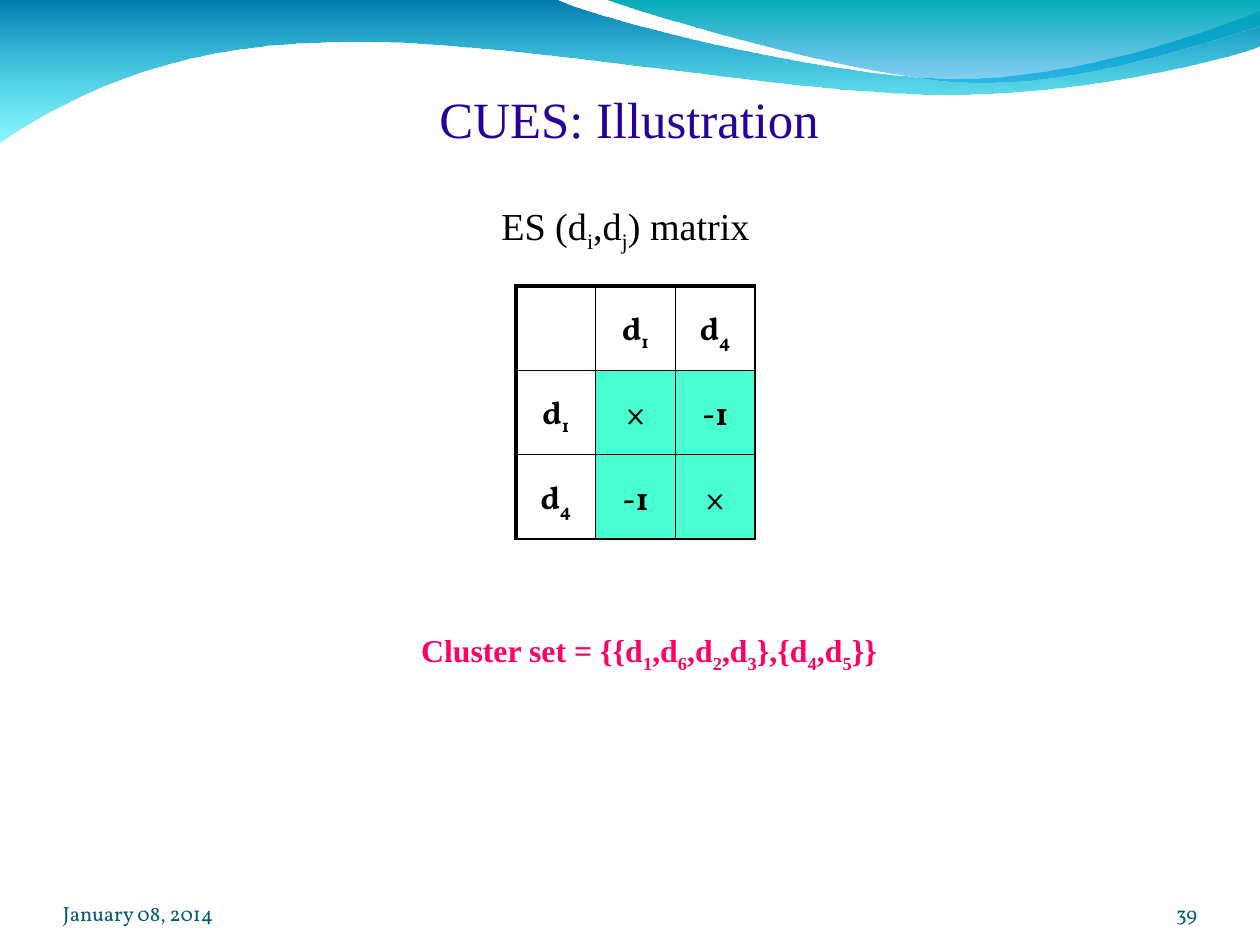
import dataclasses

import lxml.etree
import pptx
import pptx.dml.color
import pptx.enum.text
import pptx.oxml.ns
import pptx.util

PX = 8000  # EMU per px
ALIGN = pptx.enum.text.PP_ALIGN
ANCHOR = pptx.enum.text.MSO_ANCHOR


@dataclasses.dataclass(frozen=True)
class Theme:
    serif: str = "Times New Roman"
    body: str = "Vollkorn"
    title: str = "280099"
    ink: str = "000000"
    accent: str = "FF0066"
    footer: str = "045C75"
    value_fill: str = "47FFD1"
    back_wave: tuple = ("0079AF", "00EBF8")
    front_wave: tuple = ("00ADB6", "009BE5")
    wave_end_alpha: int = 45
    title_size: int = 32
    heading_size: int = 24
    text_size: int = 20
    footer_size: int = 13
    thin: float = 1
    thick: float = 2.25


THEME = Theme()

# Each step holds one point (line) or three points (cubic curve).
BACK_WAVE = [
    [(-1, -1)],
    [(554, -1)],
    [(599, 21), (837, 79), (956, 79)],
    [(1076, 79), (1208, 32), (1260, 11)],
    [(1262, 46)],
    [(1239, 55), (1096, 96), (940, 95)],
    [(784, 95), (481, 35), (325, 43)],
    [(162, 45), (57, 104), (-1, 143)],
]
FRONT_WAVE = [
    [(604, -1)],
    [(643, 14), (860, 78), (969, 82)],
    [(1078, 87), (1212, 40), (1260, 26)],
    [(1260, 0)],
]
MATRIX = [
    [[], ["d", "1"], ["d", "4"]],
    [["d", "1"], ["×"], ["-1"]],
    [["d", "4"], ["-1"], ["×"]],
]


def px(*lengths):
    return [pptx.util.Emu(length * PX) for length in lengths]


def rgb(color):
    return pptx.dml.color.RGBColor.from_string(color)


def add_element(parent, tag, **attributes):
    return lxml.etree.SubElement(parent, pptx.oxml.ns.qn(tag), attributes)


def apply_format(target, values):
    for name, value in values.items():
        setattr(target, name, value)


def margins(left, top, right, bottom):
    names = ("margin_left", "margin_top", "margin_right", "margin_bottom")
    return dict(zip(names, px(left, top, right, bottom)))


def write_text(frame, parts, size, color, font=THEME.serif, bold=False, **paragraph_format):
    """Write parts as one paragraph; every second part is a subscript."""
    paragraph = frame.paragraphs[0]
    apply_format(paragraph, paragraph_format)
    for index, part in enumerate(parts):
        run = paragraph.add_run()
        run.text = part
        apply_format(run.font, {"name": font, "size": pptx.util.Pt(size), "bold": bold})
        run.font.color.rgb = rgb(color)
        if index % 2:
            run._r.get_or_add_rPr().set("baseline", "-25000")


def add_text(slide, box, parts, size, color, insets, anchor=ANCHOR.TOP, **text_format):
    frame = slide.shapes.add_textbox(*px(*box)).text_frame
    apply_format(frame, {"word_wrap": True, "vertical_anchor": anchor, **margins(*insets)})
    write_text(frame, parts, size, color, **text_format)


def set_title(slide, text):
    title = slide.shapes.title
    apply_format(title, dict(zip(("left", "top", "width", "height"), px(63, 83, 1133, 66))))
    apply_format(title.text_frame, {
        "word_wrap": True,
        "auto_size": pptx.enum.text.MSO_AUTO_SIZE.NONE,
        "vertical_anchor": ANCHOR.BOTTOM,
        **margins(0, 7, 0, 0),
    })
    write_text(title.text_frame, [text], THEME.title_size, THEME.title, alignment=ALIGN.CENTER)


def bend_segments(shape, steps):
    """Turn the three lines drawn for each curve step into one cubic curve."""
    lines = iter(shape.element.xpath(".//a:path/a:lnTo"))
    for step in steps:
        segment = [next(lines) for _ in step]
        if len(segment) == 3:
            outline = segment[0].getparent()
            curve = add_element(outline, "a:cubicBezTo")
            outline.replace(segment[0], curve)
            for line in segment:
                curve.append(line[0])
            for line in segment[1:]:
                outline.remove(line)


def add_wave(slide, steps, colors):
    """Add a wave behind the title, filled by a gradient that fades downwards."""
    start, *outline = [px(*point) for step in steps for point in step]
    builder = slide.shapes.build_freeform(*start)
    builder.add_line_segments(outline, close=True)
    wave = builder.convert_to_shape()
    bend_segments(wave, steps[1:])
    wave.shadow.inherit = False
    wave.line.fill.background()
    wave.fill.gradient()
    wave.fill.gradient_angle = 270
    for stop, color in zip(wave.fill.gradient_stops, colors):
        stop.color.rgb = rgb(color)
    end_color = wave.element.xpath(".//a:gs/a:srgbClr")[-1]
    add_element(end_color, "a:alpha", val=str(THEME.wave_end_alpha * 1000))
    slide.shapes.title.element.addprevious(wave.element)


def set_borders(cell, widths):
    properties = cell._tc.get_or_add_tcPr()
    for side, width in zip("LRTB", widths):
        line = add_element(properties, f"a:ln{side}", w=str(pptx.util.Pt(width)))
        fill = add_element(line, "a:solidFill")
        add_element(fill, "a:srgbClr", val=THEME.ink)


def add_matrix(slide, box):
    table = slide.shapes.add_table(len(MATRIX), len(MATRIX[0]), *px(*box)).table
    apply_format(table, {"first_row": False, "horz_banding": False})
    for row, values in enumerate(MATRIX):
        for column, parts in enumerate(values):
            cell = table.cell(row, column)
            left_line = THEME.thin if column else THEME.thick
            top_line = THEME.thin if row else THEME.thick
            set_borders(cell, (left_line, THEME.thin, top_line, THEME.thin))
            if row and column:
                cell.fill.solid()
                cell.fill.fore_color.rgb = rgb(THEME.value_fill)
            else:
                cell.fill.background()
            apply_format(cell, {"vertical_anchor": ANCHOR.MIDDLE, **margins(11, 10, 11, 6)})
            write_text(cell.text_frame, parts, THEME.text_size, THEME.ink, THEME.body, True,
                       alignment=ALIGN.CENTER, line_spacing=0.86,
                       space_after=pptx.util.Pt(14.2))


def add_footer(slide, box, text, alignment):
    add_text(slide, box, [text], THEME.footer_size, THEME.footer, (0, 0, 0, 0),
             ANCHOR.BOTTOM, font=THEME.body, alignment=alignment)


def main():
    presentation = pptx.Presentation()
    presentation.slide_width, presentation.slide_height = px(1260, 945)
    slide = presentation.slides.add_slide(presentation.slide_layouts[5])

    add_wave(slide, BACK_WAVE, THEME.back_wave)
    add_wave(slide, FRONT_WAVE, THEME.front_wave)
    set_title(slide, "CUES: Illustration")
    add_matrix(slide, (516, 286, 239, 253))
    add_text(slide, (249, 196, 848, 58), ["ES (d", "i", ",d", "j", ") matrix"],
             THEME.heading_size, THEME.ink, (11, 6, 106, 6), alignment=ALIGN.CENTER)
    cluster_set = ["Cluster set = {{d", "1", ",d", "6", ",d", "2", ",d", "3",
                   "},{d", "4", ",d", "5", "}}"]
    add_text(slide, (163, 625, 972, 50), cluster_set, THEME.text_size, THEME.accent,
             (11, 6, 11, 6), bold=True, alignment=ALIGN.CENTER)
    add_footer(slide, (1092, 876, 105, 50), "39", ALIGN.RIGHT)
    add_footer(slide, (63, 876, 294, 50), "January 08, 2014", ALIGN.LEFT)

    presentation.save("out.pptx")


if __name__ == "__main__":
    main()
